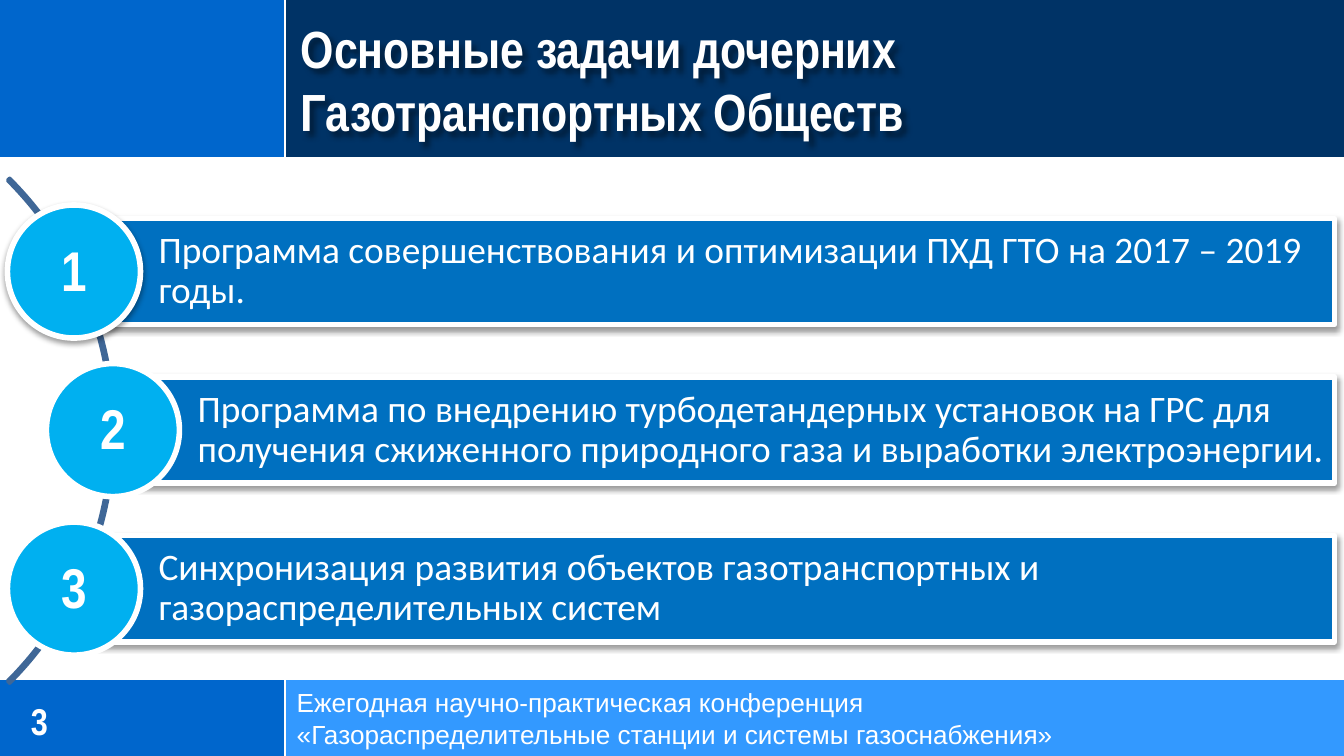
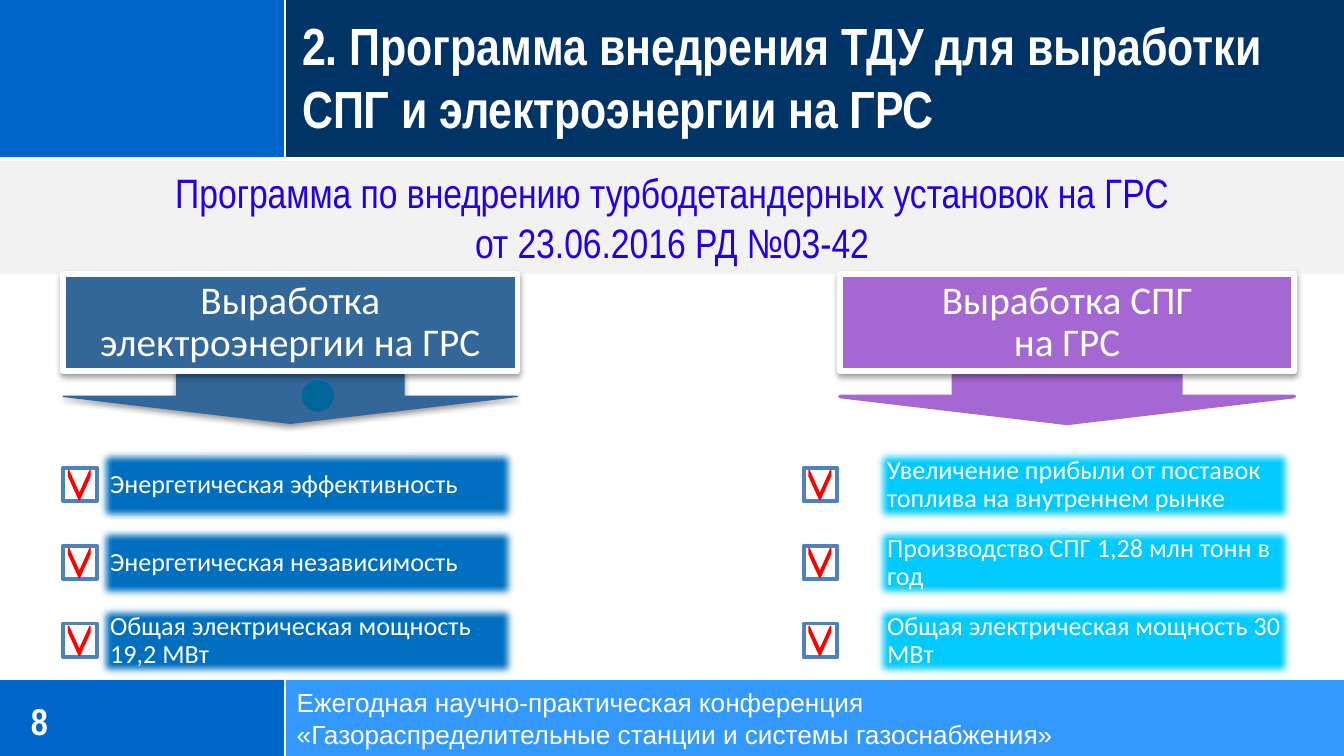
from lxml.etree import SubElement
from pptx import Presentation
from pptx.dml.color import RGBColor
from pptx.enum.shapes import MSO_CONNECTOR, MSO_SHAPE as SHP
from pptx.enum.text import MSO_ANCHOR, PP_ALIGN
from pptx.oxml.ns import qn
from pptx.util import Inches, Pt

W = 10
H = W * 9 / 16
COLORS = {
    "white": "FFFFFF", "navy": "003366", "blue": "0066CC", "sky": "3399FF",
    "bar": "0070C0", "disc": "00B0F0", "arc": "3F6797", "pale": "F2F2F2",
    "ink": "2100E6", "steel": "336699", "dot": "006699", "violet": "A568D2",
    "cyan": "00CCFF", "box": "4F81BD", "red": "FF0000", "black": "000000",
}
NARROW, BODY, PLAIN = "Arial Narrow", "Calibri", "Arial"
SPLIT, HEAD, FOOT = 2.12, 1.18, 5.06

FOOTER = ["Ежегодная научно-практическая конференция",
          "«Газораспределительные станции и системы газоснабжения»"]
TASKS_TITLE = ["Основные задачи дочерних", "Газотранспортных Обществ"]
TASKS = [
    "Программа совершенствования и оптимизации ПХД ГТО на 2017 – 2019 годы.",
    "Программа по внедрению турбодетандерных установок на ГРС для получения "
    "сжиженного природного газа и выработки электроэнергии.",
    "Синхронизация развития объектов газотранспортных и газораспределительных систем",
]
PROGRAM_TITLE = ["2. Программа внедрения ТДУ для выработки", "СПГ и электроэнергии на ГРС"]
PROGRAM_NOTE = "Программа по внедрению турбодетандерных установок на ГРС\nот 23.06.2016 РД №03-42"
COLUMNS = [
    {"head": "Выработка\nэлектроэнергии на ГРС", "x": 0.47, "check": 0.47, "bar": 0.71,
     "color": "steel", "fill": "bar", "line": 0.75, "shadow": True,
     "items": ["Энергетическая эффективность", "Энергетическая независимость",
               "Общая электрическая мощность 19,2 МВт"]},
    {"head": "Выработка СПГ\nна ГРС", "x": 6.25, "check": 5.98, "bar": 6.49,
     "color": "violet", "fill": "cyan", "line": 2, "shadow": False,
     "items": ["Увеличение прибыли от поставок топлива на внутреннем рынке",
               "Производство СПГ 1,28 млн тонн в год",
               "Общая электрическая мощность 30 МВт"]},
]


def rgb(name):
    return RGBColor.from_string(COLORS[name])


def add_shadow(sp, blur=3.1, dist=1.6, angle=90, alpha=38):
    sp.shadow.inherit = False
    effects = sp.element.spPr.find(qn("a:effectLst"))
    sh = SubElement(effects, qn("a:outerShdw"), blurRad=str(Pt(blur)), dist=str(Pt(dist)),
                    dir=str(angle * 60000), algn="ctr", rotWithShape="0")
    clr = SubElement(sh, qn("a:srgbClr"), val=COLORS["black"])
    SubElement(clr, qn("a:alpha"), val=str(alpha * 1000))


def add_shape(s, kind, box, fill=None, line=None, width=0.75, shadow=False, soft=0):
    sp = s.shapes.add_shape(kind, *map(Inches, box))
    sp.shadow.inherit = False
    if fill:
        sp.fill.solid()
        sp.fill.fore_color.rgb = rgb(fill)
    else:
        sp.fill.background()
    if line:
        sp.line.color.rgb = rgb(line)
        sp.line.width = Pt(width)
    else:
        sp.line.fill.background()
    if shadow:
        add_shadow(sp)
    if soft:
        SubElement(sp.element.spPr.find(qn("a:effectLst")), qn("a:softEdge"), rad=str(Pt(soft)))
    return sp


def write(sp, lines, size, font, color="white", bold=False, align=PP_ALIGN.LEFT,
          anchor=MSO_ANCHOR.MIDDLE, margins=(0.1, 0.05, 0.1, 0.05), spacing=None):
    tf = sp.text_frame
    tf.word_wrap = True
    tf.vertical_anchor = anchor
    tf.margin_left, tf.margin_top, tf.margin_right, tf.margin_bottom = map(Inches, margins)
    for i, line in enumerate(lines):
        p = tf.add_paragraph() if i else tf.paragraphs[0]
        p.text = line
        p.alignment = align
        if spacing:
            p.line_spacing = spacing
        p.font.size, p.font.name, p.font.bold = Pt(size), font, bold
        p.font.color.rgb = rgb(color)


def add_text(s, box, lines, size, font, **style):
    sp = s.shapes.add_textbox(*map(Inches, box))
    write(sp, lines, size, font, **style)
    return sp


def add_rule(s, x1, y1, x2, y2):
    c = s.shapes.add_connector(MSO_CONNECTOR.STRAIGHT, *map(Inches, (x1, y1, x2, y2)))
    c.line.color.rgb = rgb("white")
    c.line.width = Pt(1.25)
    SubElement(c.element.spPr, qn("a:effectLst"))


def add_frame(prs, number, title, title_box, anchor):
    s = prs.slides.add_slide(prs.slide_layouts[6])
    for y, h, right in ((FOOT, H - FOOT, "sky"), (0, HEAD, "navy")):
        add_shape(s, SHP.RECTANGLE, (0, y, SPLIT, h), "blue")
        add_shape(s, SHP.RECTANGLE, (SPLIT, y, W - SPLIT, h), right)
        add_rule(s, SPLIT, y, SPLIT, y + h)
    for y in (FOOT - 0.01, HEAD):
        add_rule(s, 0, y, W, y)
    add_text(s, (0.23, 5.1, 1.62, 0.52), [number], 20, NARROW, bold=True, margins=(0,) * 4)
    heading = add_text(s, title_box, title, 28, NARROW, bold=True, anchor=anchor)
    add_text(s, (2.11, FOOT, 7.87, 0.57), FOOTER, 14, PLAIN, anchor=MSO_ANCHOR.TOP)
    return s, heading


def build_tasks(prs):
    s, heading = add_frame(prs, "3", TASKS_TITLE, (2.14, 0.07, 7.86, 1.04), MSO_ANCHOR.MIDDLE)
    add_shadow(heading, 3, 3, 45, 43)

    arc = add_shape(s, SHP.BLOCK_ARC, (-4.46, 0.55, 5.31, 5.31), line="arc", width=2)
    for i, value in enumerate((189, 27, 0.004)):
        arc.adjustments[i] = value

    disc, bar_h, right = 0.99, 0.79, 9.93
    for i, task in enumerate(TASKS):
        mid = 2.02 + 1.18 * i
        x = 0.55 + 0.29 * (i % 2)
        bar = add_shape(s, SHP.RECTANGLE, (x, mid - bar_h / 2, right - x, bar_h),
                        "bar", "white", 3, shadow=True)
        write(bar, [task], 20, BODY, margins=(0.63, 0.06, 0.06, 0.06), spacing=0.9)
        add_shape(s, SHP.OVAL, (x - disc / 2, mid - disc / 2, disc, disc),
                  "disc", "white", 3, shadow=i == 0)
        add_text(s, (x - 0.19, mid - 0.32, 0.53, 0.61), [str(i + 1)], 30, NARROW,
                 bold=True, anchor=MSO_ANCHOR.TOP)


def build_program(prs):
    s, _ = add_frame(prs, "8", PROGRAM_TITLE, (2.15, 0.05, 7.85, 1.04), MSO_ANCHOR.TOP)
    note = add_shape(s, SHP.RECTANGLE, (0, 1.2, W, 0.84), "pale")
    write(note, [PROGRAM_NOTE], 22, NARROW, color="ink", align=PP_ALIGN.CENTER,
          anchor=MSO_ANCHOR.TOP)

    col_w, bar_w, bar_h, check = 3.38, 3.15, 0.58, 0.25
    for col in COLUMNS:
        x, color = col["x"], col["color"]
        add_shape(s, SHP.DOWN_ARROW, (x, 2.75, col_w, 0.4), color, color,
                  col["line"], shadow=col["shadow"])
        head = add_shape(s, SHP.RECTANGLE, (x, 2.04, col_w, 0.72), color, "white", 3, shadow=True)
        write(head, [col["head"]], 21, BODY, align=PP_ALIGN.CENTER,
              margins=(0.04, 0.03, 0.04, 0.03), spacing=0.9)
        for i, item in enumerate(col["items"]):
            y = 3.32 + bar_h * i
            box = (col["bar"], y, bar_w, bar_h)
            add_shape(s, SHP.RECTANGLE, box, col["fill"], soft=5)
            add_text(s, box, [item], 14, BODY, margins=(0.11,) * 4, spacing=0.9)
            add_shape(s, SHP.RECTANGLE, (col["check"], y + 0.16, check, check), "white", "box", 2)
            tick = add_shape(s, SHP.CHEVRON, (col["check"] + 0.01, y + 0.21, 0.22, 0.16),
                             "red", "red")
            tick.adjustments[0] = 1.105
            tick.rotation = 90
    add_shape(s, SHP.FLOWCHART_CONNECTOR, (2.24, 2.82, 0.25, 0.25), "dot", "steel")


def main():
    prs = Presentation()
    prs.slide_width, prs.slide_height = Inches(W), Inches(H)
    build_tasks(prs)
    build_program(prs)
    prs.save("out.pptx")


if __name__ == "__main__":
    main()
